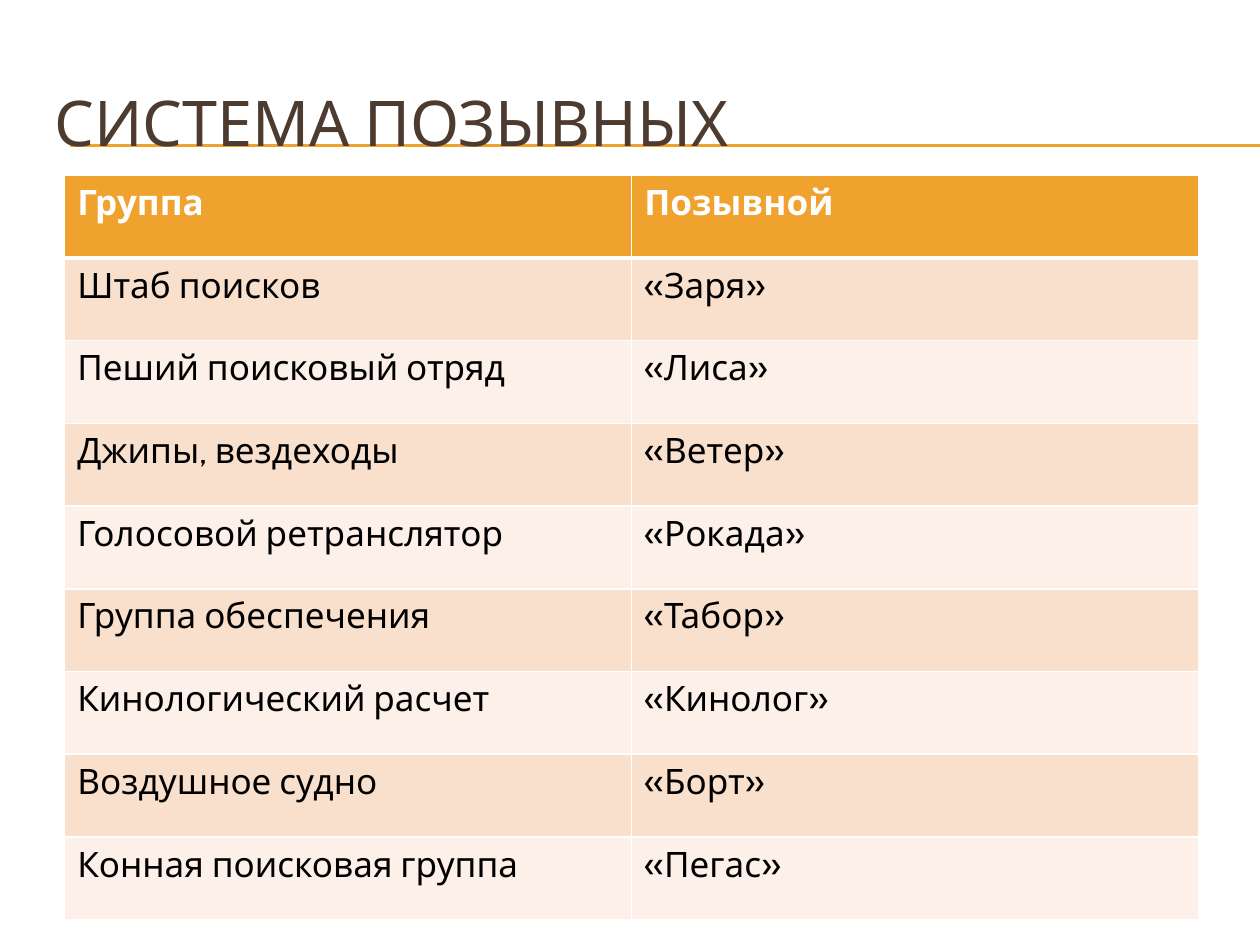
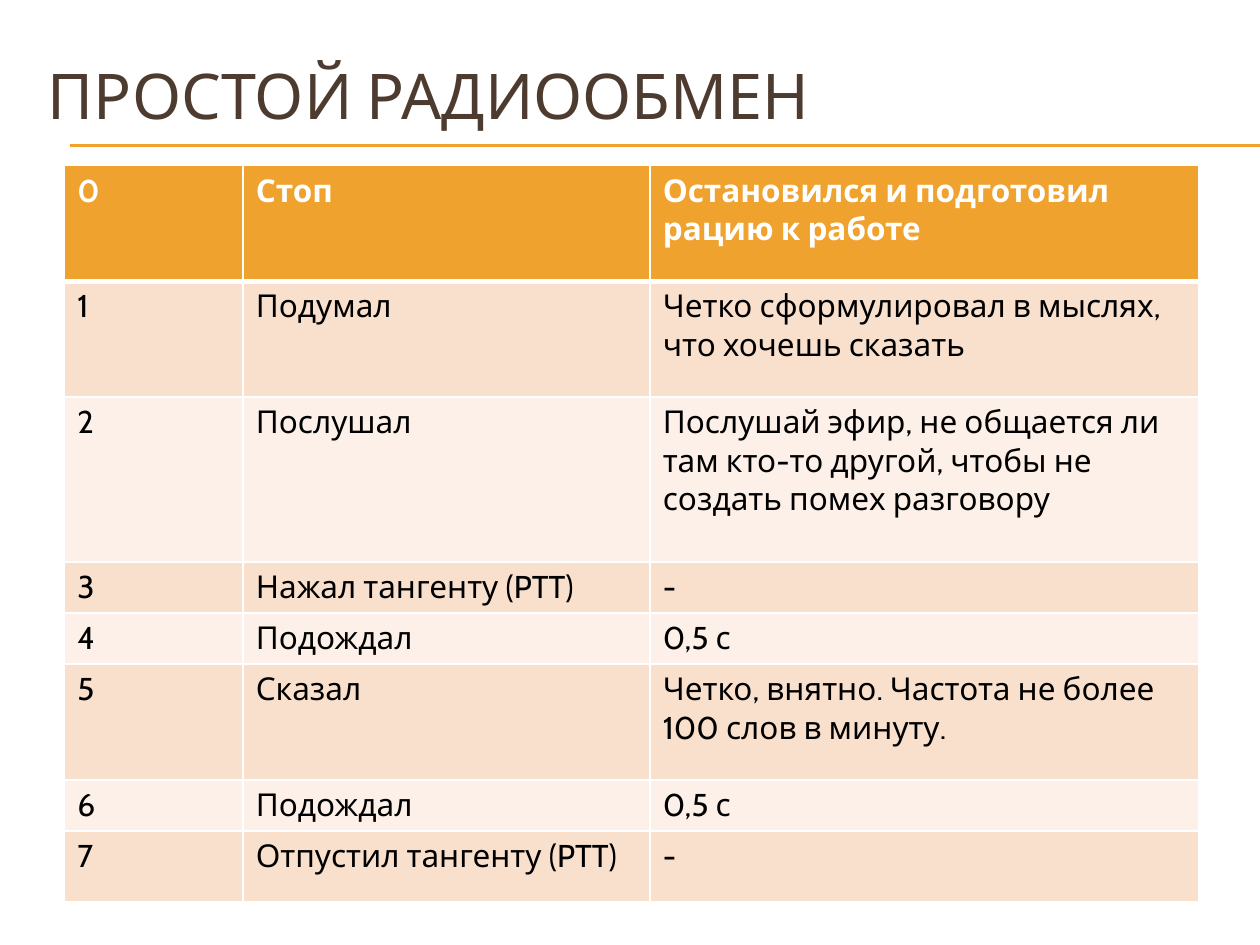
from dataclasses import dataclass

from lxml.etree import SubElement
from pptx import Presentation
from pptx.dml.color import RGBColor
from pptx.enum.shapes import MSO_CONNECTOR
from pptx.enum.text import MSO_ANCHOR, MSO_AUTO_SIZE, PP_ALIGN
from pptx.oxml.ns import qn
from pptx.util import Pt


@dataclass(frozen=True)
class Theme:
    font: str = "Cabin"
    title_color: str = "4E3B30"
    accent: str = "F0A22E"
    header_text: str = "FFFFFF"
    body_text: str = "000000"
    border: str = "FFFFFF"
    bands: tuple = ("F9E0CD", "FCF0E8")
    title_size: float = 36
    rule_width: float = 0.75
    border_width: float = 1
    header_border_width: float = 3


SLIDE_WIDTH, SLIDE_HEIGHT = 720, 540
RULE_LEFT, RULE_TOPS = 40.3, (82.8, 83.5)
TITLE_WIDTH, TITLE_HEIGHT = 684, 66.24
TABLE_LEFT = 37


class Deck:
    def __init__(self, theme):
        self.theme = theme
        self.presentation = Presentation()
        self.presentation.slide_width = Pt(SLIDE_WIDTH)
        self.presentation.slide_height = Pt(SLIDE_HEIGHT)
        self.slide = None

    def add_slide(self, heading, left, top):
        title_only = self.presentation.slide_layouts[5]
        self.slide = self.presentation.slides.add_slide(title_only)
        for rule_top in RULE_TOPS:
            self.rule(rule_top)
        self.title(heading, left, top)

    def rule(self, top):
        """Draw a thin line, behind the title, to the right slide edge."""
        rule = self.slide.shapes.add_connector(
            MSO_CONNECTOR.STRAIGHT, Pt(RULE_LEFT), Pt(top), Pt(SLIDE_WIDTH), Pt(top))
        rule.line.color.rgb = RGBColor.from_string(self.theme.accent)
        rule.line.width = Pt(self.theme.rule_width)
        SubElement(rule._element.spPr, qn("a:effectLst"))
        self.slide.shapes._spTree.insert(2, rule._element)

    def title(self, heading, left, top):
        title = self.slide.shapes.title
        title.left, title.top = Pt(left), Pt(top)
        title.width, title.height = Pt(TITLE_WIDTH), Pt(TITLE_HEIGHT)
        frame = title.text_frame
        frame.text = heading
        frame.auto_size = MSO_AUTO_SIZE.NONE
        frame.vertical_anchor = MSO_ANCHOR.MIDDLE
        frame.paragraphs[0].alignment = PP_ALIGN.LEFT
        self.style(frame.paragraphs[0], self.theme.title_size, self.theme.title_color)

    def style(self, paragraph, size, color, bold=False):
        font = paragraph.font
        font.name, font.size, font.bold = self.theme.font, Pt(size), bold
        font.color.rgb = RGBColor.from_string(color)

    def table(self, rows, top, widths, heights, size):
        table = self.slide.shapes.add_table(
            len(rows), len(widths), Pt(TABLE_LEFT), Pt(top),
            Pt(sum(widths)), Pt(sum(heights))).table
        for column, width in zip(table.columns, widths):
            column.width = Pt(width)
        for index, (texts, height) in enumerate(zip(rows, heights)):
            table.rows[index].height = Pt(height)
            for column, text in enumerate(texts):
                self.cell(table.cell(index, column), text, index, size)

    def cell(self, cell, text, row, size):
        theme = self.theme
        header = row == 0
        self.borders(cell, row)
        cell.fill.solid()
        fill = theme.accent if header else theme.bands[(row - 1) % 2]
        cell.fill.fore_color.rgb = RGBColor.from_string(fill)
        cell.text = text
        color = theme.header_text if header else theme.body_text
        self.style(cell.text_frame.paragraphs[0], size, color, bold=header)

    def borders(self, cell, row):
        """Outline a cell, with a heavier line between header and body."""
        heavy_side = {0: "lnB", 1: "lnT"}.get(row)
        properties = cell._tc.get_or_add_tcPr()
        for side in ("lnL", "lnR", "lnT", "lnB"):
            width = (self.theme.header_border_width if side == heavy_side
                     else self.theme.border_width)
            line = SubElement(properties, qn(f"a:{side}"), w=str(Pt(width)))
            fill = SubElement(line, qn("a:solidFill"))
            SubElement(fill, qn("a:srgbClr"), val=self.theme.border)


CALL_SIGNS = [
    ("Группа", "Позывной"),
    ("Штаб поисков", "«Заря»"),
    ("Пеший поисковый отряд", "«Лиса»"),
    ("Джипы, вездеходы", "«Ветер»"),
    ("Голосовой ретранслятор", "«Рокада»"),
    ("Группа обеспечения", "«Табор»"),
    ("Кинологический расчет", "«Кинолог»"),
    ("Воздушное судно", "«Борт»"),
    ("Конная поисковая группа", "«Пегас»"),
]

RADIO_STEPS = [
    ("Стоп", "Остановился и подготовил рацию к работе"),
    ("Подумал", "Четко сформулировал в мыслях, что хочешь сказать"),
    ("Послушал", "Послушай эфир, не общается ли там кто-то другой, "
                 "чтобы не создать помех разговору"),
    ("Нажал тангенту (PTT)", "-"),
    ("Подождал", "0,5 с"),
    ("Сказал", "Четко, внятно. Частота не более 100 слов в минуту."),
    ("Подождал", "0,5 с"),
    ("Отпустил тангенту (PTT)", "-"),
]


def main():
    deck = Deck(Theme())

    deck.add_slide("СИСТЕМА ПОЗЫВНЫХ", left=24, top=36)
    deck.table(CALL_SIGNS, top=100.2, widths=[324, 324],
               heights=[47.28] * len(CALL_SIGNS), size=20)

    deck.add_slide("ПРОСТОЙ РАДИООБМЕН", left=20.2, top=20.9)
    numbered_steps = [(str(number), *step) for number, step in enumerate(RADIO_STEPS)]
    deck.table(numbered_steps, top=94.5, widths=[102, 232.6, 313.4],
               heights=[66.2, 66.2, 94.3, 26.6, 26.6, 66.2, 26.6, 40.3], size=18)

    deck.presentation.save("out.pptx")


if __name__ == "__main__":
    main()
